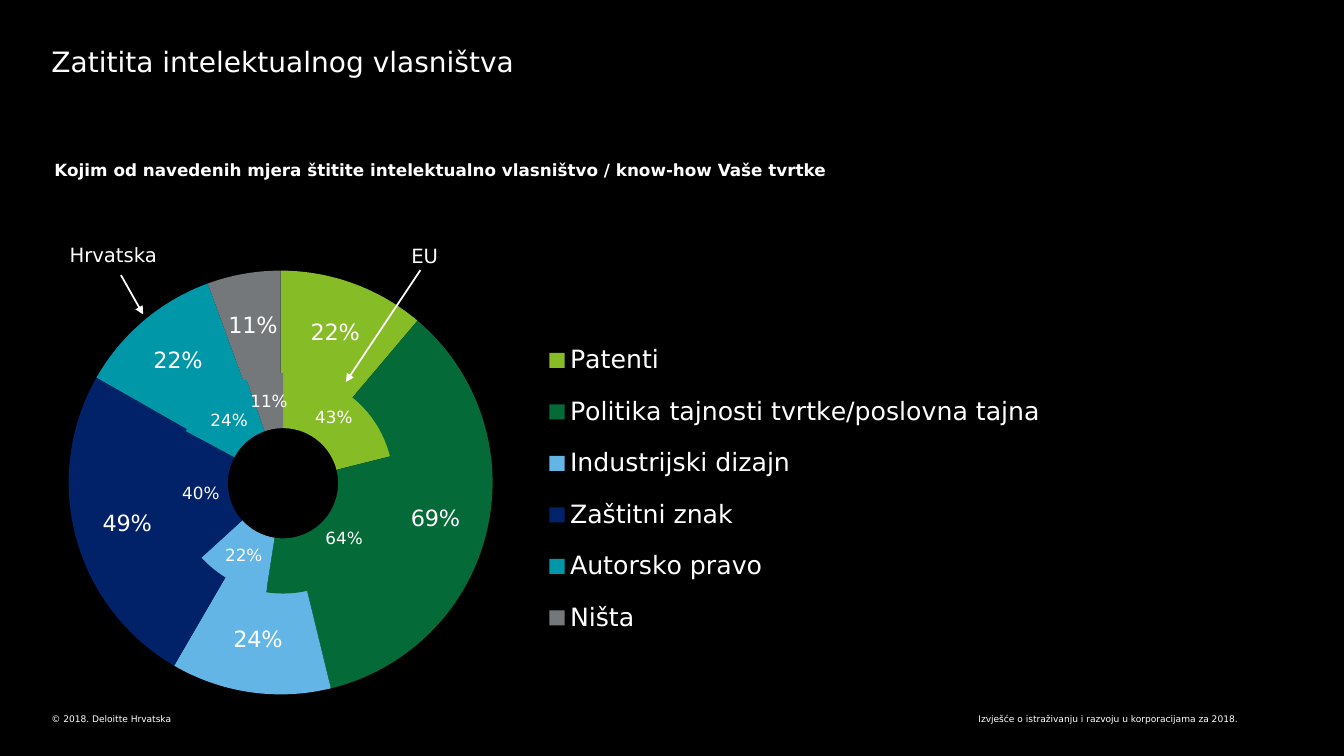
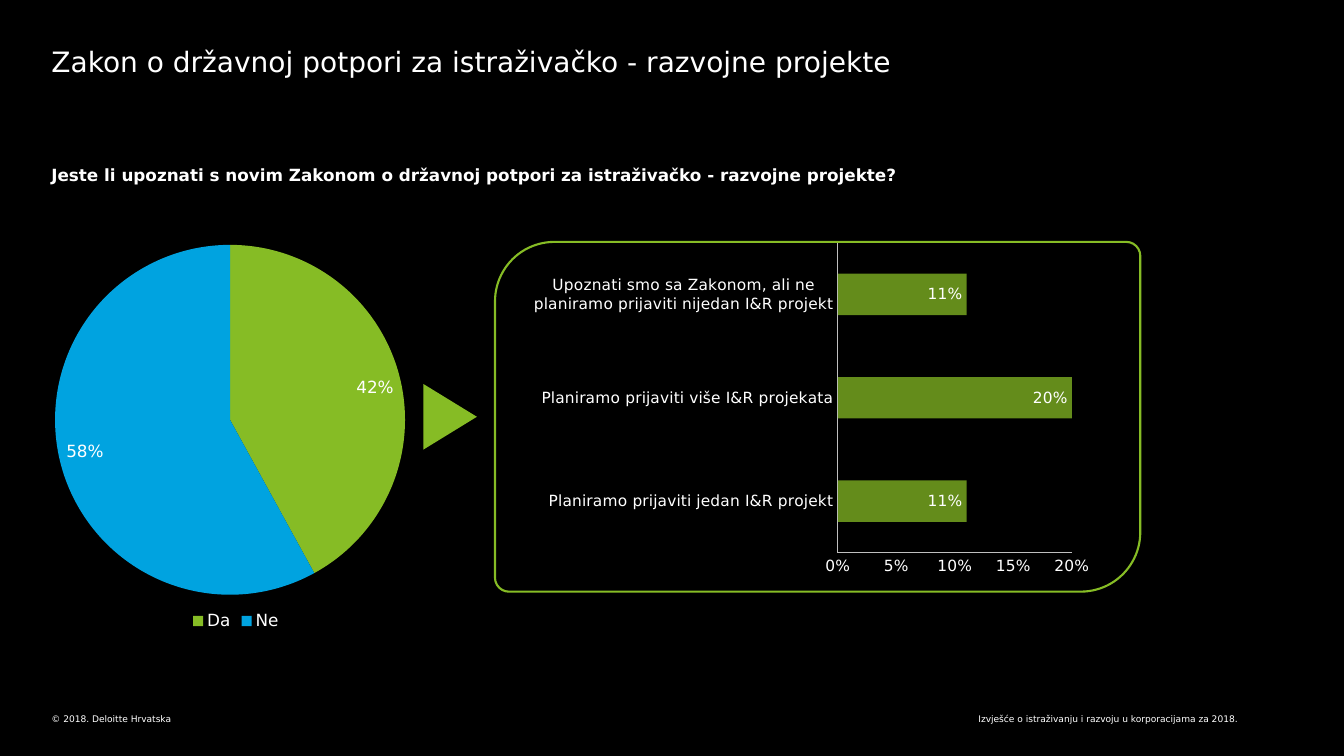
from lxml import etree
from pptx import Presentation
from pptx.chart.data import CategoryChartData
from pptx.dml.color import RGBColor
from pptx.enum.chart import XL_CHART_TYPE as CT, XL_LABEL_POSITION as LP
from pptx.enum.chart import XL_LEGEND_POSITION as LG, XL_TICK_MARK as TM
from pptx.enum.shapes import MSO_CONNECTOR, MSO_SHAPE as SH
from pptx.enum.text import PP_ALIGN as AL
from pptx.oxml.ns import qn
from pptx.util import Inches, Pt

BLACK = RGBColor(0x00, 0x00, 0x00)
WHITE = RGBColor(0xFF, 0xFF, 0xFF)
LIME = RGBColor(0x86, 0xBC, 0x25)
GREEN = RGBColor(0x04, 0x6A, 0x38)
SKY = RGBColor(0x62, 0xB5, 0xE5)
NAVY = RGBColor(0x01, 0x21, 0x69)
TEAL = RGBColor(0x00, 0x97, 0xA9)
GREY = RGBColor(0x75, 0x78, 0x7B)
BLUE = RGBColor(0x00, 0xA3, 0xE0)
SILVER = RGBColor(0xBF, 0xBF, 0xBF)
FONT = "DejaVu Sans"
PERCENT = "#,##0%"
LEFT = 0.51

FOOTERS = [
    ("Izvješće o istraživanju i razvoju u korporacijama za 2018.", (6.93, 7.08, 5.35, 0.11), AL.RIGHT),
    ("© 2018. Deloitte Hrvatska", (LEFT, 7.08, 5.86, 0.11), AL.LEFT),
]
MEASURES = [
    ("Patenti", 0.22, 0.43, LIME),
    ("Politika tajnosti tvrtke/poslovna tajna", 0.69, 0.64, GREEN),
    ("Industrijski dizajn", 0.24, 0.22, SKY),
    ("Zaštitni znak", 0.49, 0.4, NAVY),
    ("Autorsko pravo", 0.22, 0.24, TEAL),
    ("Ništa", 0.11, 0.11, GREY),
]
RINGS = [
    ("Hrvatska", (0.69, 2.41, 1.04, 0.24), (1.2, 2.73, 1.42, 3.12)),
    ("EU", (4.08, 2.42, 0.53, 0.24), (4.17, 2.68, 3.43, 3.79)),
]
AWARE = [("Da", 0.42, LIME), ("Ne", 0.58, BLUE)]
PLANS = [
    ("Planiramo prijaviti jedan I&R projekt", 0.11),
    ("Planiramo prijaviti više I&R projekata", 0.2),
    ("Upoznati smo sa Zakonom, ali ne planiramo prijaviti nijedan I&R projekt", 0.11),
]


def style(font, size, **extra):
    for key, value in {"name": FONT, "size": Pt(size), **extra}.items():
        setattr(font, key, value)
    font.color.rgb = WHITE


def place(box):
    return [Inches(v) for v in box]


def add_text(s, text, box, size, align=AL.LEFT, **extra):
    tf = s.shapes.add_textbox(*place(box)).text_frame
    for side in ("left", "top", "right", "bottom"):
        setattr(tf, f"margin_{side}", 0)
    tf.word_wrap = True
    p = tf.paragraphs[0]
    p.alignment = align
    r = p.add_run()
    r.text = text
    style(r.font, size, **extra)


def add_slide(prs, title, question, box):
    s = prs.slides.add_slide(prs.slide_layouts[6])
    s.background.fill.solid()
    s.background.fill.fore_color.rgb = BLACK
    for text, place_at, align in FOOTERS:
        add_text(s, text, place_at, 6.5, align)
    add_text(s, title, (LEFT, 0.44, 12.31, 0.37), 20)
    add_text(s, question, box, 12, bold=True)
    return s


def set_layout(parent, index, shares, inner=False):
    for old in parent.findall(qn("c:layout")):
        parent.remove(old)
    layout = etree.Element(qn("c:layout"))
    manual = etree.SubElement(layout, qn("c:manualLayout"))
    values = [("layoutTarget", "inner")] if inner else []
    values += [("xMode", "edge"), ("yMode", "edge"), *zip("xywh", shares)]
    for tag, value in values:
        etree.SubElement(manual, qn(f"c:{tag}")).set("val", str(value))
    parent.insert(index, layout)


def add_chart(s, kind, cats, values, box, size):
    data = CategoryChartData(number_format=PERCENT)
    data.categories = cats
    data.add_series("Series 1", values)
    chart = s.shapes.add_chart(kind, *place(box), data).chart
    chart.has_title = chart.has_legend = False
    style(chart.font, size)
    plot = chart.plots[0]
    plot.vary_by_categories = kind != CT.BAR_CLUSTERED
    plot.has_data_labels = True
    labels = plot.data_labels
    flags = {"show_value": True, "show_percentage": False, "number_format": PERCENT,
             "number_format_is_linked": False}
    for key, value in flags.items():
        setattr(labels, key, value)
    style(labels.font, size)
    return chart


def add_round(s, kind, cats, values, colors, box, size, shares, hole=None):
    chart = add_chart(s, kind, cats, values, box, size)
    area = chart.plots[0]
    for i, color in enumerate(colors):
        fill = area.series[0].points[i].format.fill
        fill.solid()
        fill.fore_color.rgb = color
    set_layout(chart._chartSpace.chart.plotArea, 0, shares, inner=True)
    if hole:
        chart._chartSpace.find(".//" + qn("c:holeSize")).set("val", str(hole))
    return chart


def add_legend(chart, position, size):
    chart.has_legend = True
    chart.legend.position = position
    chart.legend.include_in_layout = False
    style(chart.legend.font, size)
    return chart.legend


def add_arrow(s, ends):
    c = s.shapes.add_connector(MSO_CONNECTOR.STRAIGHT, *place(ends))
    c.line.color.rgb = WHITE
    c.line.width = Pt(1.25)
    etree.SubElement(c.line._get_or_add_ln(), qn("a:tailEnd")).set("type", "triangle")
    etree.SubElement(c._element.spPr, qn("a:effectLst"))


def add_shape(s, kind, box):
    shape = s.shapes.add_shape(kind, *place(box))
    shape.shadow.inherit = False
    return shape


def protection_slide(prs):
    s = add_slide(prs, "Zatitita intelektualnog vlasništva",
                  "Kojim od navedenih mjera štitite intelektualno vlasništvo / know-how Vaše tvrtke",
                  (0.54, 1.58, 8.31, 0.4))
    names, croatia, eu, colors = zip(*MEASURES)
    outer = add_round(s, CT.DOUGHNUT, names, croatia, colors, (0.41, 2.51, 10.1, 4.38), 16,
                      (0.01, 0.04, 0.45, 0.96), 75)
    legend = add_legend(outer, LG.RIGHT, 18)
    set_layout(legend._element, 1, (0.49, 0.16, 0.5, 0.75))
    numbers = [str(i + 1) for i in range(len(eu))]
    add_round(s, CT.DOUGHNUT, numbers, eu, colors, (1.2, 3.22, 3.42, 3), 12,
              (0.15, 0.16, 0.64, 0.73), 42)
    for name, box, ends in RINGS:
        add_text(s, name, box, 14)
        add_arrow(s, ends)


def law_slide(prs):
    s = add_slide(prs, "Zakon o državnoj potpori za istraživačko - razvojne projekte",
                  "Jeste li upoznati s novim Zakonom o državnoj potpori za istraživačko - razvojne projekte?",
                  (LEFT, 1.63, 9.04, 0.3))
    names, values, colors = zip(*AWARE)
    pie = add_round(s, CT.PIE, names, values, colors, (0.4, 2.31, 3.88, 3.99), 12,
                    (0.01, 0.03, 0.95, 0.87))
    pie.plots[0].data_labels.position = LP.INSIDE_END
    add_legend(pie, LG.BOTTOM, 12)

    bars = add_chart(s, CT.BAR_CLUSTERED, *zip(*PLANS), (5.18, 2.34, 5.74, 3.44), 11)
    plot = bars.plots[0]
    plot.gap_width = 150
    plot.data_labels.position = LP.INSIDE_END
    fill = plot.series[0].format.fill
    fill.solid()
    fill.fore_color.rgb = LIME
    color = plot.series[0]._element.find(".//" + qn("a:srgbClr"))
    etree.SubElement(color, qn("a:alpha")).set("val", "75000")
    for axis in (bars.category_axis, bars.value_axis):
        axis.has_major_gridlines = False
        axis.major_tick_mark = axis.minor_tick_mark = TM.NONE
        style(axis.tick_labels.font, 11)
        axis.format.line.color.rgb = SILVER
        axis.format.line.width = Pt(0.75)
    axis = bars.value_axis
    axis.minimum_scale, axis.maximum_scale, axis.major_unit = 0, 0.2, 0.05
    axis.tick_labels.number_format = PERCENT
    axis.tick_labels.number_format_is_linked = False

    frame = add_shape(s, SH.ROUND_2_DIAG_RECTANGLE, (4.91, 2.4, 6.4, 3.47))
    frame.adjustments[0], frame.adjustments[1] = 0.17, 0.04
    frame.fill.background()
    frame.line.color.rgb = LIME
    frame.line.width = Pt(1.5)
    pointer = add_shape(s, SH.ISOSCELES_TRIANGLE, (4.14, 3.87, 0.65, 0.53))
    pointer.rotation = 90
    pointer.fill.solid()
    pointer.fill.fore_color.rgb = LIME
    pointer.line.fill.background()


def main():
    prs = Presentation()
    prs.slide_width, prs.slide_height = Inches(13.33), Inches(7.5)
    protection_slide(prs)
    law_slide(prs)
    prs.save("out.pptx")


if __name__ == "__main__":
    main()
